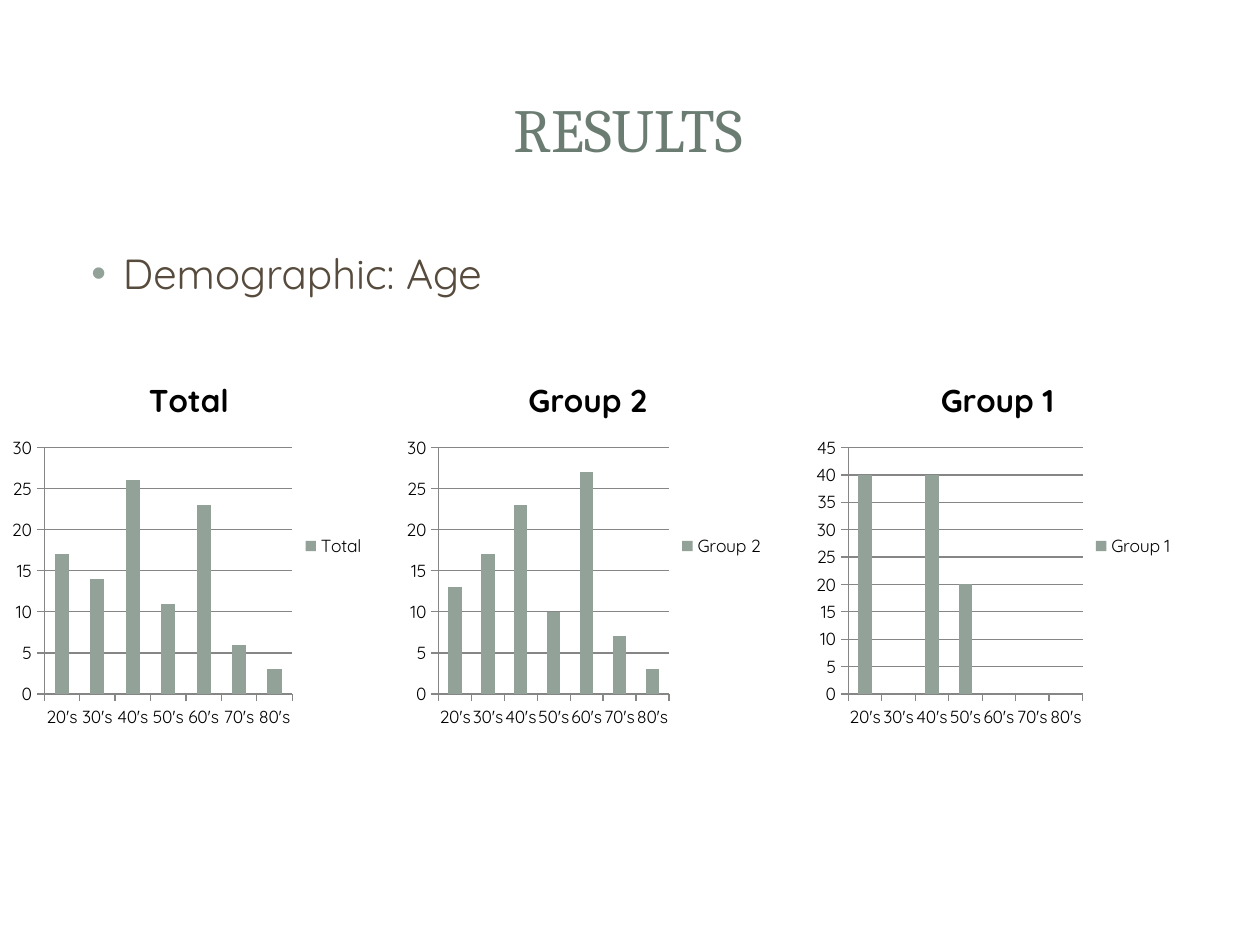
from lxml import etree
from pptx import Presentation
from pptx.chart.data import CategoryChartData
from pptx.dml.color import RGBColor
from pptx.enum.chart import XL_CHART_TYPE, XL_LEGEND_POSITION, XL_TICK_MARK
from pptx.enum.shapes import MSO_SHAPE
from pptx.enum.text import MSO_ANCHOR, PP_ALIGN
from pptx.oxml import parse_xml
from pptx.oxml.ns import nsdecls, qn
from pptx.util import Pt

COLUMN = XL_CHART_TYPE.COLUMN_CLUSTERED
RIGHT = XL_LEGEND_POSITION.RIGHT
OUT = XL_TICK_MARK.OUTSIDE
ROUND, RECT = MSO_SHAPE.ROUNDED_RECTANGLE, MSO_SHAPE.RECTANGLE
MIDDLE, TOP = MSO_ANCHOR.MIDDLE, MSO_ANCHOR.TOP
CENTER, LEFT = PP_ALIGN.CENTER, PP_ALIGN.LEFT
SAGE, GRAY, WHITE = "93A299", "868686", "FFFFFF"


def color(code):
    return RGBColor.from_string(code)


def style(font, code, **form):
    for key, value in form.items():
        setattr(font, key, value)
    font.color.rgb = color(code)


prs = Presentation()
prs.slide_width, prs.slide_height = Pt(720), Pt(540)
slide = prs.slides.add_slide(prs.slide_layouts[1])
title, body = slide.shapes.title, slide.placeholders[1]

# White panels behind the text: preset, place, opacity in percent
panels = [
    (ROUND, (7.2, 7.92, 705.6, 524.88), 100),
    (RECT, (21.6, 21.6, 676.8, 104.4), 83),
    (RECT, (29.52, 29.52, 660.24, 87.84), 100),
]
for kind, place, alpha in panels:
    panel = slide.shapes.add_shape(kind, *map(Pt, place))
    panel.shadow.inherit = False
    panel.line.fill.background()
    panel.fill.solid()
    panel.fill.fore_color.rgb = color(WHITE)
    if kind == ROUND:
        panel.adjustments[0] = 0.02
    if alpha < 100:
        tone = panel._element.spPr.find(qn("a:solidFill"))[0]
        etree.SubElement(tone, qn("a:alpha")).set("val", str(alpha * 1000))
    title._element.addprevious(panel._element)

# Title and list: place, text, anchor, alignment and font
texts = [
    (title, (33.84, 31.9, 650.16, 82.08), "RESULTS", MIDDLE, CENTER,
     "6B7D72", {"name": "Cambria", "size": Pt(35)}),
    (body, (36, 137.8, 648, 344.16), "Demographic: Age", TOP, LEFT,
     "564B3C", {"name": "Quicksand", "size": Pt(24)}),
]
for shape, place, text, anchor, align, code, form in texts:
    for key, value in zip(("left", "top", "width", "height"), place):
        setattr(shape, key, Pt(value))
    frame = shape.text_frame
    frame.text = text
    frame.vertical_anchor = anchor
    para = frame.paragraphs[0]
    para.alignment = align
    style(para.runs[0].font, code, **form)

# Bullet
para = body.text_frame.paragraphs[0]
para.space_before = Pt(4.8)
props = para._p.get_or_add_pPr()
props.set("marL", str(Pt(27)))
props.set("indent", str(Pt(-18)))
for xml in (
    f'<a:buClr {nsdecls("a")}><a:srgbClr val="{SAGE}"/></a:buClr>',
    f'<a:buFont {nsdecls("a")} typeface="Arial"/>',
    f'<a:buChar {nsdecls("a")} char="•"/>',
):
    props.append(parse_xml(xml))

# Charts: name, left edge, values, axis top
ages = [f"{age}'s" for age in range(20, 90, 10)]
groups = [
    ("Total ", 2.5, (17, 14, 26, 11, 23, 6, 3), 30),
    ("Group 1", 462, (40, 0, 40, 20, 0, 0, 0), 45),
    ("Group 2", 227.9, (13, 17, 23, 10, 27, 7, 3), 30),
]
for name, left, values, peak in groups:
    data = CategoryChartData()
    data.categories = ages
    data.add_series(name, values)
    chart = slide.shapes.add_chart(
        COLUMN, Pt(left), Pt(204), Pt(216), Pt(216), data).chart
    style(chart.font, "000000", name="Quicksand", size=Pt(10))

    # Heading and legend
    chart.has_title = True
    head = chart.chart_title
    head.include_in_layout = False
    head.text_frame.text = name
    style(head.text_frame.paragraphs[0].runs[0].font, "000000",
          name="Quicksand", size=Pt(18), bold=True)
    chart.has_legend = True
    chart.legend.position = RIGHT
    chart.legend.include_in_layout = False

    # Columns
    plot = chart.plots[0]
    plot.vary_by_categories = False
    plot.gap_width = 150
    fill = plot.series[0].format.fill
    fill.solid()
    fill.fore_color.rgb = color(SAGE)

    # Axes and grid
    scale = chart.value_axis
    scale.minimum_scale, scale.maximum_scale, scale.major_unit = 0, peak, 5
    scale.has_major_gridlines = True
    for axis in (chart.category_axis, scale):
        axis.major_tick_mark = OUT
    for part in (chart.category_axis, scale, scale.major_gridlines):
        part.format.line.color.rgb = color(GRAY)
        part.format.line.width = Pt(0.75)

prs.save("out.pptx")
